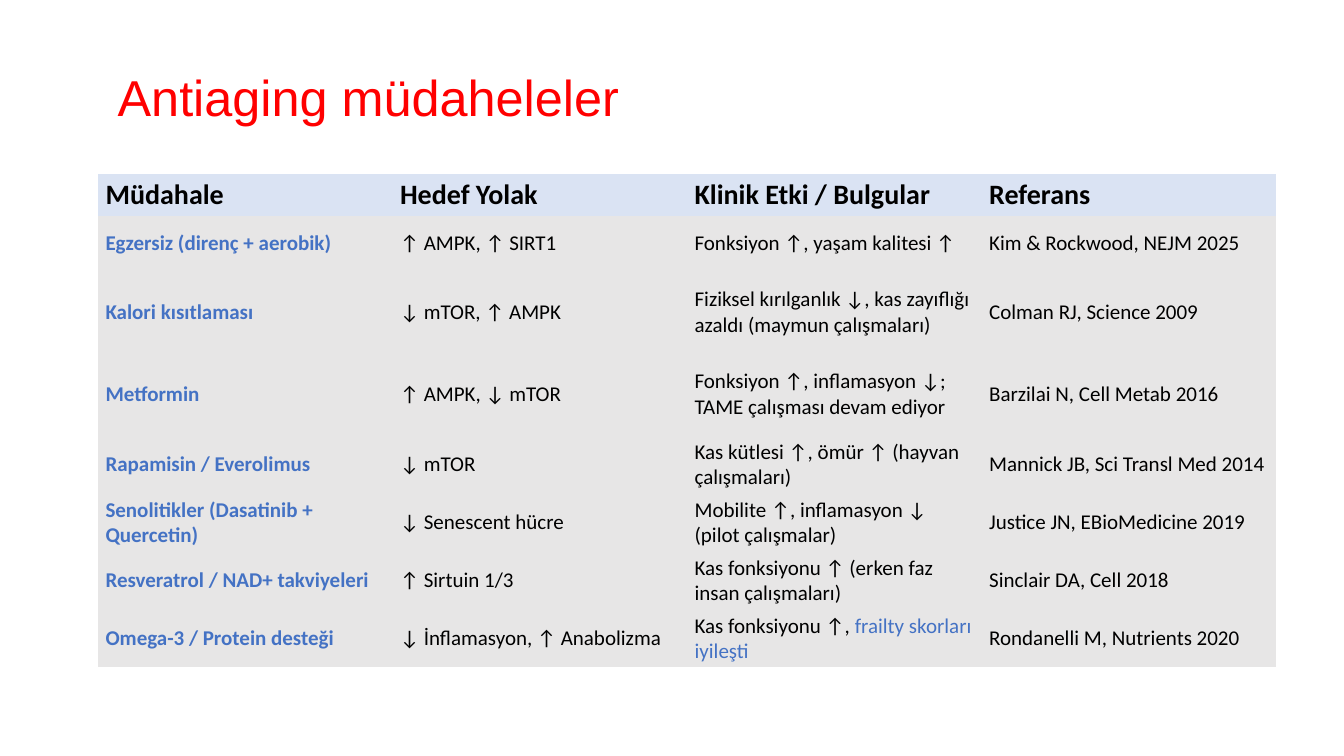
from pptx import Presentation
from pptx.dml.color import RGBColor
from pptx.enum import text
from pptx.util import Pt

RED = RGBColor(0xFF, 0x00, 0x00)
BLACK = RGBColor(0x00, 0x00, 0x00)
BLUE = RGBColor(0x44, 0x72, 0xC4)
PALE = RGBColor(0xDA, 0xE3, 0xF3)
GREY = RGBColor(0xE7, 0xE6, 0xE6)

NO_GRID = "{2D5ABB26-0587-4C30-8999-92F81FD0307C}"
MIDDLE = text.MSO_ANCHOR.MIDDLE
INSET = dict(margin_left=Pt(5.4), margin_right=Pt(5.4),
             margin_top=Pt(2.7), margin_bottom=Pt(2.7),
             vertical_anchor=MIDDLE)

HEAD = dict(name="Calibri", size=Pt(20), bold=True, color=BLACK)
BODY = dict(name="Calibri", size=Pt(15), bold=False, color=BLACK)
LABEL = {**BODY, "bold": True, "color": BLUE}
ACCENT = {**BODY, "color": BLUE}
TITLE = dict(name="Arial", size=Pt(36), color=RED)

HEADER = ["Müdahale", "Hedef Yolak", "Klinik Etki / Bulgular", "Referans"]
# Each row: height, then the four cells; a tuple holds plain and accented text.
ROWS = [
    (40, "Egzersiz (direnç + aerobik)", "↑ AMPK, ↑ SIRT1",
     "Fonksiyon ↑, yaşam kalitesi ↑", "Kim & Rockwood, NEJM 2025"),
    (58.5, "Kalori kısıtlaması", "↓ mTOR, ↑ AMPK",
     "Fiziksel kırılganlık ↓, kas zayıflığı azaldı (maymun çalışmaları)",
     "Colman RJ, Science 2009"),
    (58.5, "Metformin", "↑ AMPK, ↓ mTOR",
     "Fonksiyon ↑, inflamasyon ↓; TAME çalışması devam ediyor",
     "Barzilai N, Cell Metab 2016"),
    (40, "Rapamisin / Everolimus", "↓ mTOR",
     "Kas kütlesi ↑, ömür ↑ (hayvan çalışmaları)",
     "Mannick JB, Sci Transl Med 2014"),
    (40, "Senolitikler (Dasatinib + Quercetin)", "↓ Senescent hücre",
     "Mobilite ↑, inflamasyon ↓ (pilot çalışmalar)",
     "Justice JN, EBioMedicine 2019"),
    (40, "Resveratrol / NAD+ takviyeleri", "↑ Sirtuin 1/3",
     "Kas fonksiyonu ↑ (erken faz insan çalışmaları)",
     "Sinclair DA, Cell 2018"),
    (40, "Omega-3 / Protein desteği", "↓ İnflamasyon, ↑ Anabolizma",
     ("Kas fonksiyonu ↑, ", "frailty skorları iyileşti"),
     "Rondanelli M, Nutrients 2020"),
]


def assign(item, values):
    for key, value in values.items():
        setattr(item, key, value)


def add_run(para, words, form):
    run = para.add_run()
    run.text = words
    assign(run.font, {k: v for k, v in form.items() if k != "color"})
    run.font.color.rgb = form["color"]


def add_title(slide, words):
    box = slide.shapes.add_textbox(Pt(77), Pt(19.5), Pt(828), Pt(104.4))
    frame = box.text_frame
    assign(frame, dict(word_wrap=True, vertical_anchor=MIDDLE))
    para = frame.paragraphs[0]
    para.line_spacing = 0.9
    add_run(para, words, TITLE)


def fill_cell(cell, parts, form, fill):
    """Write a string, or a (plain, accented) pair, into a cell."""
    assign(cell, INSET)
    cell.fill.solid()
    cell.fill.fore_color.rgb = fill
    if isinstance(parts, str):
        parts = (parts,)
    para = cell.text_frame.paragraphs[0]
    for words, style in zip(parts, (form, ACCENT)):
        add_run(para, words, style)


def add_grid(slide):
    lines = [(30, *HEADER)] + ROWS
    total = sum(line[0] for line in lines)
    frame = slide.shapes.add_table(len(lines), len(HEADER), Pt(70), Pt(124),
                                   Pt(841.6), Pt(total))
    table = frame.table
    table.horz_banding = False
    table._tbl.tblPr[0].text = NO_GRID
    for r, (height, *cells) in enumerate(lines):
        table.rows[r].height = Pt(height)
        for c, parts in enumerate(cells):
            form = HEAD if r == 0 else LABEL if c == 0 else BODY
            fill_cell(table.cell(r, c), parts, form, GREY if r else PALE)


def main():
    deck = Presentation()
    assign(deck, dict(slide_width=Pt(960), slide_height=Pt(540)))
    slide = deck.slides.add_slide(deck.slide_layouts[6])
    add_title(slide, "Antiaging müdaheleler")
    add_grid(slide)
    deck.save("out.pptx")


if __name__ == "__main__":
    main()
